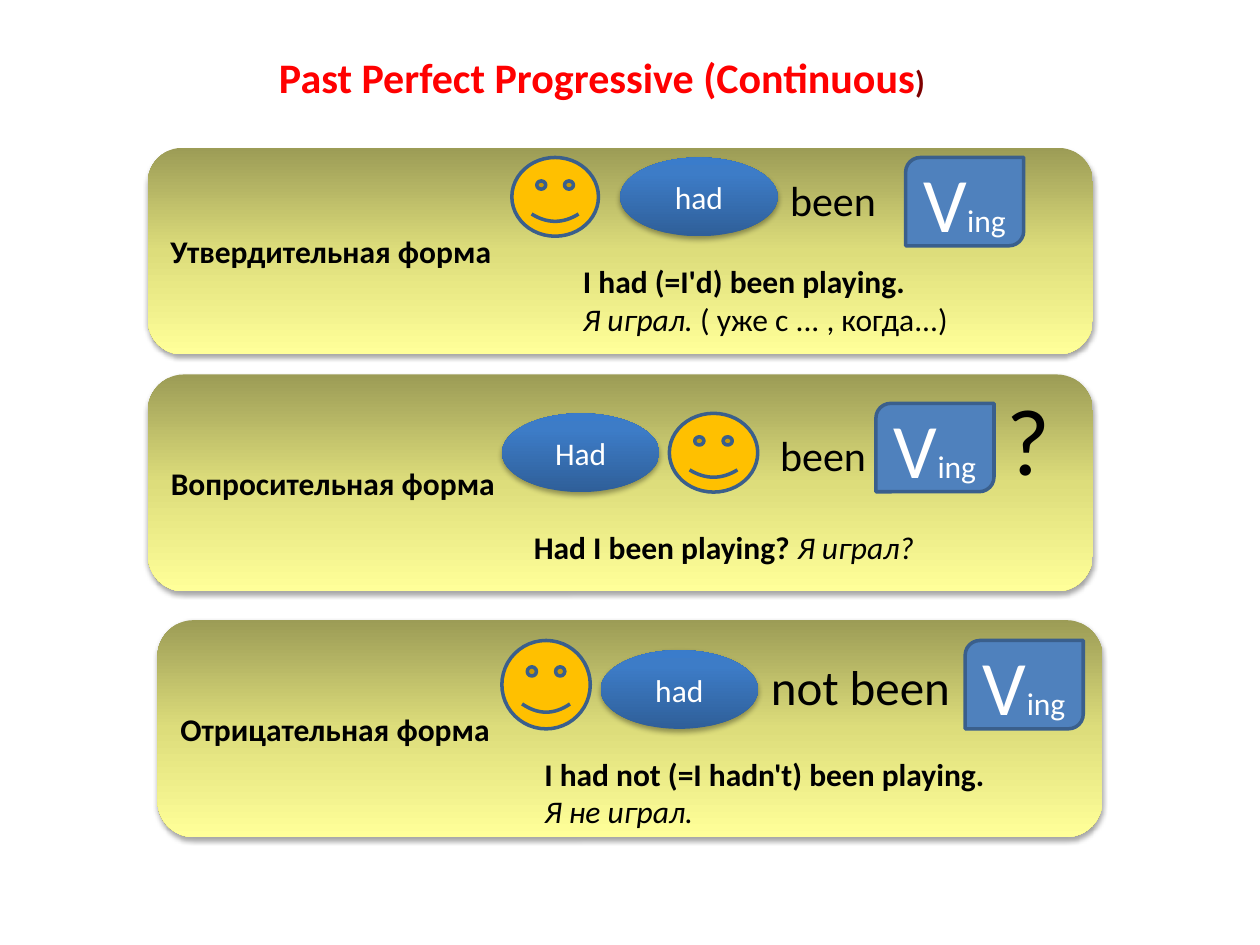
from lxml.etree import SubElement
from pptx import Presentation
from pptx.dml.color import RGBColor
from pptx.enum.shapes import MSO_SHAPE as Shape
from pptx.enum.text import MSO_ANCHOR as Anchor, MSO_AUTO_SIZE as AutoSize, PP_ALIGN as Align
from pptx.oxml.ns import qn
from pptx.util import Pt

BLACK = RGBColor(0x00, 0x00, 0x00)
WHITE = RGBColor(0xFF, 0xFF, 0xFF)
RED = RGBColor(0xFF, 0x00, 0x00)
DARK_RED = RGBColor(0x7E, 0x00, 0x00)
GOLD = RGBColor(0xFF, 0xC0, 0x00)
BLUE = RGBColor(0x4F, 0x81, 0xBD)
OUTLINE = RGBColor(0x3A, 0x5F, 0x8C)
PANEL_STOPS = [(0, RGBColor(0x9C, 0x9C, 0x56)), (50, RGBColor(0xDD, 0xDD, 0x7B)),
               (100, RGBColor(0xFF, 0xFF, 0x99))]
OVAL_STOPS = [(0, RGBColor(0x2F, 0x5F, 0x99)), (80, RGBColor(0x3D, 0x7C, 0xC7)),
              (100, RGBColor(0x3A, 0x7C, 0xCB))]

PLAIN = {"name": "Calibri", "size": Pt(18), "bold": False, "italic": False, "color": BLACK}
BOLD = {"bold": True}
ITALIC = {"italic": True}


def write(shape, paragraphs, align=Align.LEFT):
    """Fill a shape with paragraphs, each a list of (text, format) spans."""
    frame = shape.text_frame
    frame.word_wrap = True
    for index, spans in enumerate(paragraphs):
        para = frame.paragraphs[0] if index == 0 else frame.add_paragraph()
        para.alignment = align
        for text, changes in spans:
            span = para.add_run()
            span.text = text
            for key, value in {**PLAIN, **changes}.items():
                if key == "color":
                    span.font.color.rgb = value
                else:
                    setattr(span.font, key, value)


def add_text(page, area, paragraphs, align=Align.LEFT):
    box = page.shapes.add_textbox(*map(Pt, area))
    write(box, paragraphs, align)
    box.text_frame.auto_size = AutoSize.SHAPE_TO_FIT_TEXT


def add_outlined(page, kind, area, color):
    shape = page.shapes.add_shape(kind, *map(Pt, area))
    shape.shadow.inherit = False
    shape.fill.solid()
    shape.fill.fore_color.rgb = color
    shape.line.color.rgb = OUTLINE
    shape.line.width = Pt(2)
    return shape


def add_shaded(page, kind, area, stops, angle):
    """Add a shape with a gradient fill, no outline and a soft shadow below."""
    shape = page.shapes.add_shape(kind, *map(Pt, area))
    shape.fill.gradient()
    shape.fill.gradient_angle = angle
    shape.line.fill.background()
    shape.shadow.inherit = False
    properties = shape.element.spPr
    stop_list = properties.find(qn("a:gradFill")).find(qn("a:gsLst"))
    for old_stop in list(stop_list):
        stop_list.remove(old_stop)
    for position, color in stops:
        stop = SubElement(stop_list, qn("a:gs"), pos=str(position * 1000))
        SubElement(stop, qn("a:srgbClr"), val=str(color))
    effects = properties.find(qn("a:effectLst"))
    shadow = SubElement(effects, qn("a:outerShdw"), blurRad=str(Pt(3.1)), dist=str(Pt(1.8)),
                        dir="5400000", rotWithShape="0")
    shade = SubElement(shadow, qn("a:srgbClr"), val=str(BLACK))
    SubElement(shade, qn("a:alpha"), val="35000")
    shape.text_frame.vertical_anchor = Anchor.MIDDLE
    return shape


def add_panel(page, left, top, height, label):
    panel = add_shaded(page, Shape.ROUNDED_RECTANGLE, (left, top, 540, height), PANEL_STOPS, 270)
    write(panel, [[(label, BOLD)]])


def add_subject(page, left, top, width, height):
    add_outlined(page, Shape.SMILEY_FACE, (left, top, width, height), GOLD)


def add_auxiliary(page, left, top, word):
    oval = add_shaded(page, Shape.OVAL, (left, top, 90, 45), OVAL_STOPS, 90)
    write(oval, [[(word, {"color": WHITE})]], Align.CENTER)


def add_verb(page, left, top):
    verb = add_outlined(page, Shape.ROUND_2_DIAG_RECTANGLE, (left, top, 67.5, 50.5), BLUE)
    verb.text_frame.vertical_anchor = Anchor.MIDDLE
    write(verb, [[("V", {"size": Pt(44), "color": WHITE}), ("ing", {"color": WHITE})]],
          Align.CENTER)


def add_word(page, area, word, size):
    add_text(page, area, [[(word, {"size": Pt(size)})]])


def add_affirmative(page):
    add_panel(page, 84.5, 84.5, 118, "Утвердительная форма")
    add_subject(page, 292.5, 90, 49.5, 45)
    add_auxiliary(page, 354.4, 90, "had")
    add_word(page, (444.4, 96, 73, 36), "been", 24)
    add_verb(page, 517.5, 90)
    add_text(page, (326, 146, 248, 51), [
        [("I had (=I'd) been playing.", BOLD)],
        [("Я играл.", ITALIC), (" ( уже с ... , когда...)", {})]])


def add_question(page):
    add_panel(page, 84.5, 214, 124, "Вопросительная форма")
    add_auxiliary(page, 286.8, 236.2, "Had")
    add_subject(page, 382.5, 236.2, 50.5, 45)
    add_word(page, (438.7, 242, 73, 36), "been", 24)
    add_verb(page, 500.5, 230.5)
    add_word(page, (568, 214, 40, 73), "?", 54)
    add_text(page, (298, 298, 310, 51), [
        [("Had I been playing? ", BOLD), ("Я играл?", ITALIC)]])


def add_negative(page):
    add_panel(page, 90, 354.4, 124, "Отрицательная форма")
    add_subject(page, 286.8, 366, 50.5, 50.5)
    add_auxiliary(page, 343.2, 371.5, "had")
    add_word(page, (433.4, 371.5, 118, 41), "not been", 28)
    add_verb(page, 551.5, 366)
    add_text(page, (304, 427.6, 304, 51), [
        [("I had not (=I hadn't) been playing.", BOLD)],
        [("Я не играл.", ITALIC)]])


def main():
    deck = Presentation()
    deck.slide_width, deck.slide_height = Pt(720), Pt(540)
    page = deck.slides.add_slide(deck.slide_layouts[6])
    add_text(page, (145, 26, 402, 36), [
        [("Past Perfect Progressive (Continuous", {"size": Pt(24), "bold": True, "color": RED}),
         (") ", {"bold": True, "color": DARK_RED})]], Align.CENTER)
    add_affirmative(page)
    add_question(page)
    add_negative(page)
    deck.save("out.pptx")


if __name__ == "__main__":
    main()
